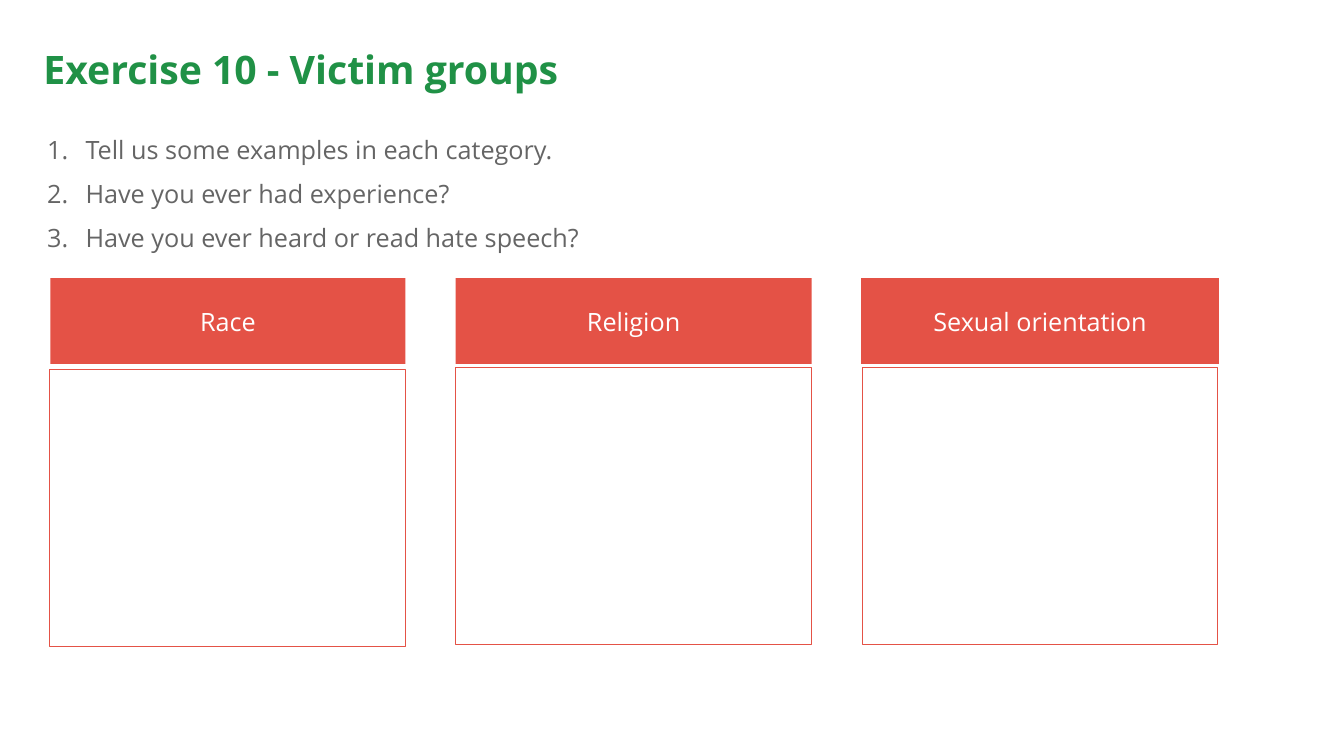
from pptx import Presentation
from pptx import util as u
from pptx.dml.color import RGBColor
from pptx.enum import shapes, text
from pptx.oxml.ns import qn
from lxml import etree
from dataclasses import dataclass

TITLE = "Exercise 10 - Victim groups"
TASKS = [
    "Tell us some examples in each category.",
    "Have you ever had experience?",
    "Have you ever heard or read hate speech?",
]
GROUPS = [
    {"name": "Race", "head": (0.5, 3.52), "box": (0.49, 3.67)},
    {"name": "Religion", "head": (4.52, 3.53), "box": (4.52, 3.65)},
    {"name": "Sexual orientation", "head": (8.54, 3.55), "box": (8.55, 3.65)},
]


@dataclass
class Theme:
    font: str = "Open Sans"
    green: str = "209146"
    grey: str = "656565"
    red: str = "E45246"
    white: str = "FFFFFF"
    big: int = 28
    base: int = 18


LOOK = Theme()
HEAD_TOP, HEAD_HIGH = 2.76, 0.85
BOX_WIDE, BOX_HIGH = 3.53, 2.74


def color(code):
    return RGBColor.from_string(code)


def number(para, indent):
    props = para._p.get_or_add_pPr()
    props.set("marL", str(u.Inches(indent)))
    props.set("indent", str(-u.Inches(indent)))
    etree.SubElement(props, qn("a:buFont"), typeface="+mj-lt")
    etree.SubElement(props, qn("a:buAutoNum"), type="arabicPeriod")


def write(frame, lines, size=LOOK.base, ink=LOOK.grey, bold=False,
          align=text.PP_ALIGN.LEFT, anchor=text.MSO_ANCHOR.MIDDLE,
          inset=(0.1, 0.05), leading=None, gap=0, indent=0):
    frame.word_wrap = True
    frame.auto_size = text.MSO_AUTO_SIZE.NONE
    frame.vertical_anchor = anchor
    frame.margin_left = frame.margin_right = u.Inches(inset[0])
    frame.margin_top = frame.margin_bottom = u.Inches(inset[1])
    for i, line in enumerate(lines):
        para = frame.add_paragraph() if i else frame.paragraphs[0]
        para.alignment = align
        if leading:
            para.line_spacing = leading
        para.space_before = u.Pt(gap if i else 0)
        para.space_after = u.Pt(gap)
        if indent:
            number(para, indent)
        run = para.add_run()
        run.text = line
        run.font.name = LOOK.font
        run.font.size = u.Pt(size)
        run.font.bold = bold
        run.font.color.rgb = color(ink)


def block(slide, left, top, wide, high, fill=None, line=None):
    rect = slide.shapes.add_shape(
        shapes.MSO_SHAPE.RECTANGLE, *map(u.Inches, (left, top, wide, high)))
    rect.shadow.inherit = False
    if fill:
        rect.fill.solid()
        rect.fill.fore_color.rgb = color(fill)
    else:
        rect.fill.background()
    if line:
        rect.line.color.rgb = color(line)
        rect.line.width = u.Pt(0.75)
    else:
        rect.line.fill.background()
    return rect


def main():
    deck = Presentation()
    deck.slide_width, deck.slide_height = u.Inches(13.33), u.Inches(7.5)
    slide = deck.slides.add_slide(deck.slide_layouts[5])

    title = slide.shapes.title
    title.left, title.top = u.Inches(0.37), u.Inches(0.32)
    title.width, title.height = u.Inches(12.6), u.Inches(0.78)
    write(title.text_frame, [TITLE], size=LOOK.big, ink=LOOK.green,
          bold=True, inset=(0.06, 0.06), leading=0.9)

    tasks = slide.shapes.add_textbox(
        *map(u.Inches, (0.37, 1.32, 12.02, 4.03)))
    write(tasks.text_frame, TASKS, anchor=text.MSO_ANCHOR.TOP,
          leading=0.9, gap=6, indent=0.38)

    for group in GROUPS:
        left, wide = group["head"]
        head = block(slide, left, HEAD_TOP, wide, HEAD_HIGH, fill=LOOK.red)
        write(head.text_frame, [group["name"]], ink=LOOK.white,
              align=text.PP_ALIGN.CENTER)
    for group in GROUPS:
        block(slide, *group["box"], BOX_WIDE, BOX_HIGH, line=LOOK.red)

    deck.save("out.pptx")


if __name__ == "__main__":
    main()
